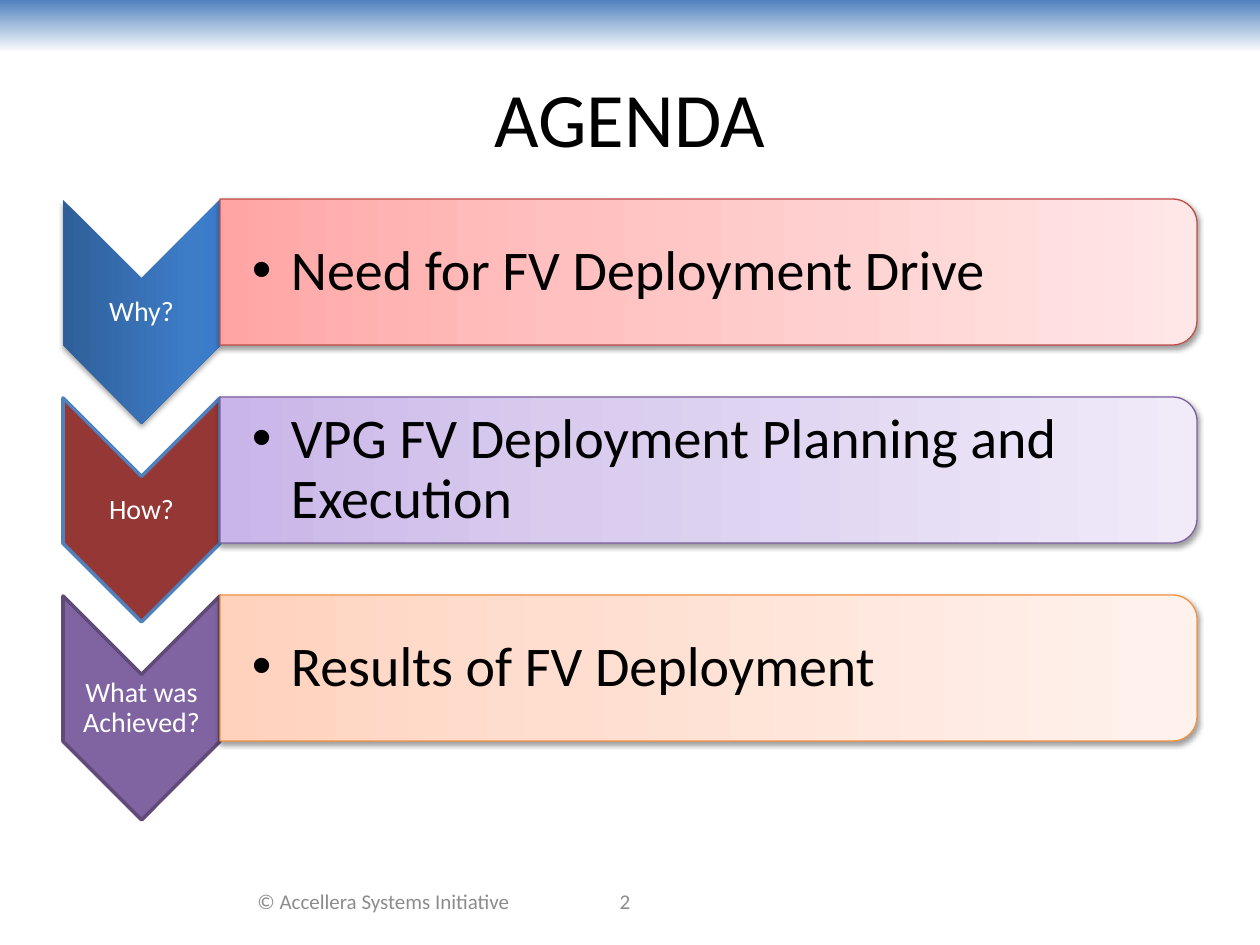
from lxml.etree import SubElement
from pptx import Presentation
from pptx.dml.color import RGBColor
from pptx.enum.shapes import MSO_SHAPE
from pptx.enum.text import MSO_ANCHOR, PP_ALIGN
from pptx.oxml.ns import qn
from pptx.util import Pt

EMU_PER_PX = 914400 / 126
FONT = "Calibri"
COLORS = {
    "black": "000000", "white": "FFFFFF", "footer": "8C8C8C", "banner": "4F81BD",
    "why_dark": "2F5F99", "why_mid": "3D7CC7", "why_light": "3A7CCB",
    "how": "953735", "how_line": "4F81BD",
    "what": "8064A2", "what_line": "5F4A78",
    "red_dark": "FFA6A5", "red_mid": "FFC0BF", "red_light": "FFE7E7", "red_line": "BF4C48",
    "violet_dark": "C9B5E8", "violet_mid": "D8CBEE", "violet_light": "F0EAF9",
    "violet_line": "7D60A0",
    "orange_dark": "FFD2BD", "orange_mid": "FFDED0", "orange_light": "FFF2ED",
    "orange_line": "F69240",
}
ROW_PITCH = 198
AGENDA = [
    ("Why?", "Need for FV Deployment Drive", "red",
     [(0, "why_dark"), (80, "why_mid"), (100, "why_light")], None),
    ("How?", "VPG FV Deployment Planning and Execution", "violet", "how", "how_line"),
    ("What was Achieved?", "Results of FV Deployment", "orange", "what", "what_line"),
]


def px(*lengths):
    """Turn pixel lengths into EMU."""
    return [round(length * EMU_PER_PX) for length in lengths]


def rgb(name):
    """Look up a named colour."""
    return RGBColor.from_string(COLORS[name])


def set_gradient(shape, stops, angle):
    """Fill a shape with a linear gradient of (percent, colour name) stops."""
    shape.fill.gradient()
    gradient = shape._element.spPr.find(qn("a:gradFill"))
    for child in list(gradient):
        gradient.remove(child)
    gradient.set("rotWithShape", "1")
    stop_list = SubElement(gradient, qn("a:gsLst"))
    for percent, name in stops:
        stop = SubElement(stop_list, qn("a:gs"), pos=str(percent * 1000))
        SubElement(stop, qn("a:srgbClr"), val=COLORS[name])
    SubElement(gradient, qn("a:lin"), ang=str(angle * 60000), scaled="0")


def set_shadow(shape, opacity, distance):
    """Give a shape a soft shadow that falls straight down."""
    effects = shape._element.spPr.find(qn("a:effectLst"))
    shadow = SubElement(effects, qn("a:outerShdw"), blurRad=str(Pt(3.1)),
                        dist=str(Pt(distance)), dir="5400000", rotWithShape="0")
    color = SubElement(shadow, qn("a:srgbClr"), val=COLORS["black"])
    SubElement(color, qn("a:alpha"), val=str(opacity * 1000))


def add_panel(slide, kind, box, fill, angle, line=None, weight=1, turned=False):
    """Add a filled shape that covers the box, turned a quarter if asked."""
    left, top, width, height = box
    if turned:
        left, top = left + (width - height) / 2, top + (height - width) / 2
        width, height = height, width
    shape = slide.shapes.add_shape(kind, *px(left, top, width, height))
    shape.rotation = 90 if turned else 0
    shape.shadow.inherit = False
    if isinstance(fill, str):
        shape.fill.solid()
        shape.fill.fore_color.rgb = rgb(fill)
    else:
        set_gradient(shape, fill, angle)
    if line:
        shape.line.color.rgb = rgb(line)
        shape.line.width = Pt(weight)
    else:
        shape.line.fill.background()
    return shape


def add_text(slide, box, text, size, color, insets=(13, 6, 13, 6), spacing=1.0, bullet=False):
    """Add a vertically centred text box with one paragraph."""
    frame = slide.shapes.add_textbox(*px(*box)).text_frame
    frame.word_wrap = True
    frame.vertical_anchor = MSO_ANCHOR.MIDDLE
    (frame.margin_left, frame.margin_top,
     frame.margin_right, frame.margin_bottom) = px(*insets)
    paragraph = frame.paragraphs[0]
    paragraph.alignment = PP_ALIGN.LEFT if bullet else PP_ALIGN.CENTER
    paragraph.line_spacing = spacing
    if bullet:
        properties = paragraph._p.get_or_add_pPr()
        indent, = px(39)
        properties.set("marL", str(indent))
        properties.set("indent", str(-indent))
        SubElement(properties, qn("a:buFont"), typeface="Arial")
        SubElement(properties, qn("a:buChar"), char="•")
    run = paragraph.add_run()
    run.text = text
    run.font.name = FONT
    run.font.size = Pt(size)
    run.font.color.rgb = rgb(color)


def add_header(slide, box):
    """Place the fading banner and the title."""
    left, top, width, _ = box
    add_panel(slide, MSO_SHAPE.RECTANGLE, (left, top, width, 53),
              [(0, "banner"), (100, "white")], 90)
    title = slide.shapes.title
    title.left, title.top, title.width, title.height = px(left + 63, top + 38, width - 126, 157)
    title.text_frame.vertical_anchor = MSO_ANCHOR.MIDDLE
    paragraph = title.text_frame.paragraphs[0]
    paragraph.alignment = PP_ALIGN.CENTER
    run = paragraph.add_run()
    run.text = "AGENDA"
    run.font.name = FONT
    run.font.size = Pt(44)
    run.font.color.rgb = rgb("black")


def add_agenda_row(slide, box, question, answer, tint, fill, line):
    """Place a downward chevron with its question and the answer bar beside it."""
    left, top, width, height = box
    arrow_width, bar_height = 157, 146
    bar_left, bar_width = left + arrow_width, width - arrow_width
    chevron = add_panel(slide, MSO_SHAPE.CHEVRON, (left, top, arrow_width, height),
                        fill, 270, line, 2, turned=True)
    if not line:
        set_shadow(chevron, 35, 1.8)
    add_text(slide, (left, top + 79, arrow_width, 67), question, 16, "white",
             (1, 1, 1, 1), 0.9)
    stops = [(0, f"{tint}_dark"), (35, f"{tint}_mid"), (100, f"{tint}_light")]
    bar = add_panel(slide, MSO_SHAPE.ROUND_2_SAME_RECTANGLE,
                    (bar_left, top - 1, bar_width, bar_height),
                    stops, 270, f"{tint}_line", 0.75, turned=True)
    set_shadow(bar, 38, 1.6)
    add_text(slide, (bar_left, top + 7, bar_width - 7, 131), answer, 32, "black",
             (32, 3, 3, 3), 0.9, bullet=True)


def add_footer(slide, box):
    """Place the copyright line and the slide number."""
    left, top, _, height = box
    add_text(slide, (left, top, 305, height), "© Accellera Systems Initiative", 12, "footer")
    add_text(slide, (left + 273, top, 242, height), "2", 12, "footer")


def main():
    """Build the agenda slide and save it."""
    presentation = Presentation()
    presentation.slide_width, presentation.slide_height = px(1260, 945)
    slide = presentation.slides.add_slide(presentation.slide_layouts[5])
    add_header(slide, (0, 0, 1260, 195))
    for index, row in enumerate(AGENDA):
        add_agenda_row(slide, (63, 200 + index * ROW_PITCH, 1134, 224), *row)
    add_footer(slide, (231, 876, 515, 50))
    presentation.save("out.pptx")


if __name__ == "__main__":
    main()
